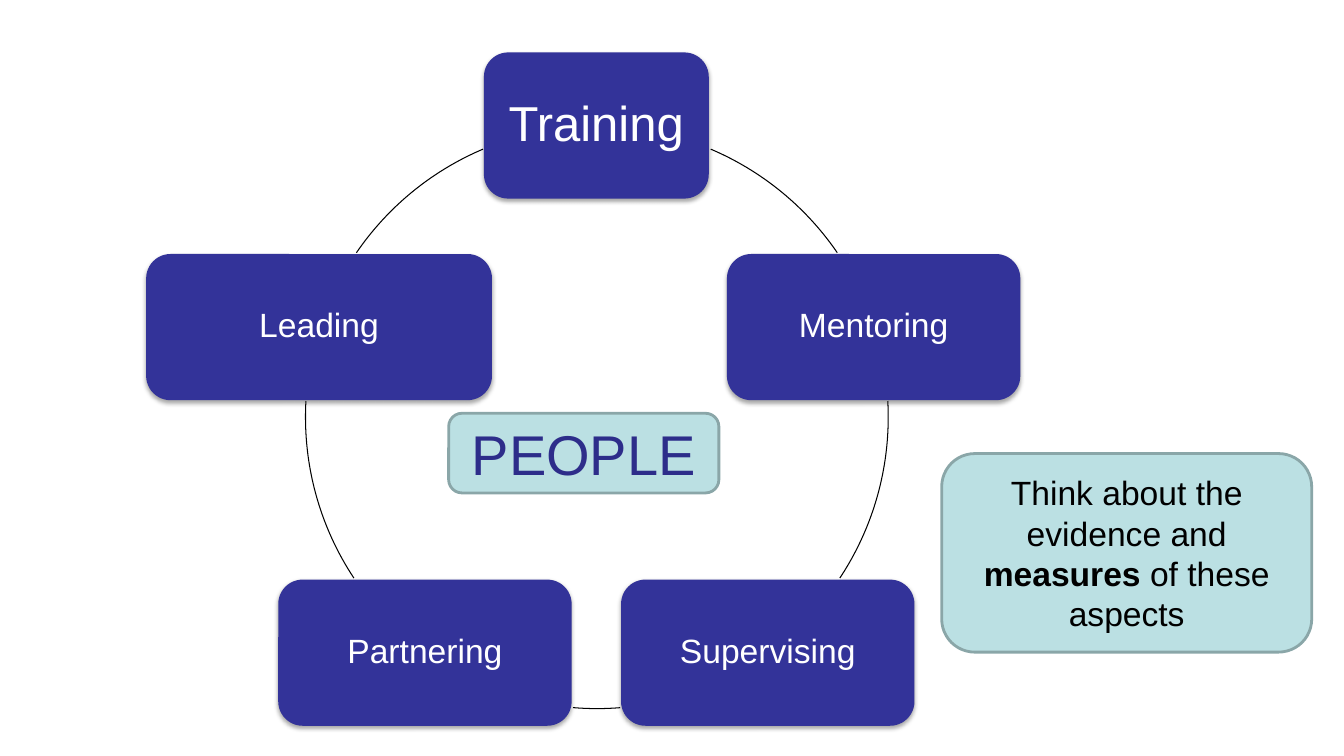
"""Build the PEOPLE cycle slide: five linked roles and a prompt."""
from lxml import etree
from pptx import Presentation
from pptx import util as u
from pptx.dml.color import RGBColor
from pptx.enum import shapes, text
from pptx.oxml.ns import qn

INDIGO = RGBColor(0x33, 0x33, 0x99)
DEEP_INDIGO = RGBColor(0x2D, 0x2D, 0x8A)
AQUA = RGBColor(0xBB, 0xE0, 0xE3)
GREY_TEAL = RGBColor(0x8A, 0xA6, 0xA8)
WHITE = RGBColor(0xFF, 0xFF, 0xFF)
BLACK = RGBColor(0, 0, 0)

prs = Presentation()
prs.slide_width, prs.slide_height = u.Inches(13.33), u.Inches(7.5)
slide = prs.slides.add_slide(prs.slide_layouts[6])


def add_box(place, fill, runs, size, color):
    box = slide.shapes.add_shape(shapes.MSO_SHAPE.ROUNDED_RECTANGLE, *map(u.Inches, place))
    box.shadow.inherit = False
    box.fill.solid()
    box.fill.fore_color.rgb = fill
    frame = box.text_frame
    frame.word_wrap = True
    frame.vertical_anchor = text.MSO_ANCHOR.MIDDLE
    line = frame.paragraphs[0]
    line.alignment = text.PP_ALIGN.CENTER
    for words, bold in runs:
        run = line.add_run()
        run.text = words
        run.font.color.rgb = color
        for name, value in {"name": "Arial", "size": u.Pt(size), "bold": bold}.items():
            setattr(run.font, name, value)
    return box


roles = [
    ("Training", 4.8, 0.52, 2.23, 35, 0.15),
    ("Mentoring", 7.21, 2.52, 2.91, 24, 0.1),
    ("Supervising", 6.16, 5.75, 2.91, 24, 0.1),
    ("Partnering", 2.76, 5.75, 2.91, 24, 0.1),
    ("Leading", 1.45, 2.52, 3.43, 24, 0.1),
]
for role, left, top, width, size, inset in roles:
    box = add_box((left, top, width, 1.45), INDIGO, [(role, False)], size, WHITE)
    box.line.fill.background()
    box.text_frame.paragraphs[0].line_spacing = 0.9
    for side in ("left", "top", "right", "bottom"):
        setattr(box.text_frame, f"margin_{side}", u.Inches(inset))
    effects = box._element.spPr.find(qn("a:effectLst"))
    shadow = etree.SubElement(effects, qn("a:outerShdw"), blurRad=str(u.Pt(3.1)),
                              dist=str(u.Pt(1.8)), dir="5400000", rotWithShape="0")
    shade = etree.SubElement(shadow, qn("a:srgbClr"), val="000000")
    etree.SubElement(shade, qn("a:alpha"), val="35000")

ring_place = [u.Inches(value) for value in (3.03, 1.25, 5.78, 5.78)]
for start, end in [(293, 325.6), (356.8, 33.5), (85.4, 94.7), (146.5, 183.2), (214.4, 247)]:
    arc = slide.shapes.add_shape(shapes.MSO_SHAPE.ARC, *ring_place)
    arc.shadow.inherit = False
    arc.adjustments[0], arc.adjustments[1] = start * 0.6, end * 0.6
    arc.fill.background()
    arc.line.color.rgb = BLACK
    arc.line.width = u.Pt(0.75)

prompt = [("Think about the evidence and ", False), ("measures", True), (" of these aspects", False)]
for place, runs, size, color in [
    ((9.34, 4.5, 3.67, 1.97), prompt, 24, BLACK),
    ((4.45, 4.1, 2.68, 0.79), [("PEOPLE", False)], 40, DEEP_INDIGO),
]:
    box = add_box(place, AQUA, runs, size, color)
    box.line.color.rgb = GREY_TEAL
    box.line.width = u.Pt(2)

prs.save("out.pptx")
